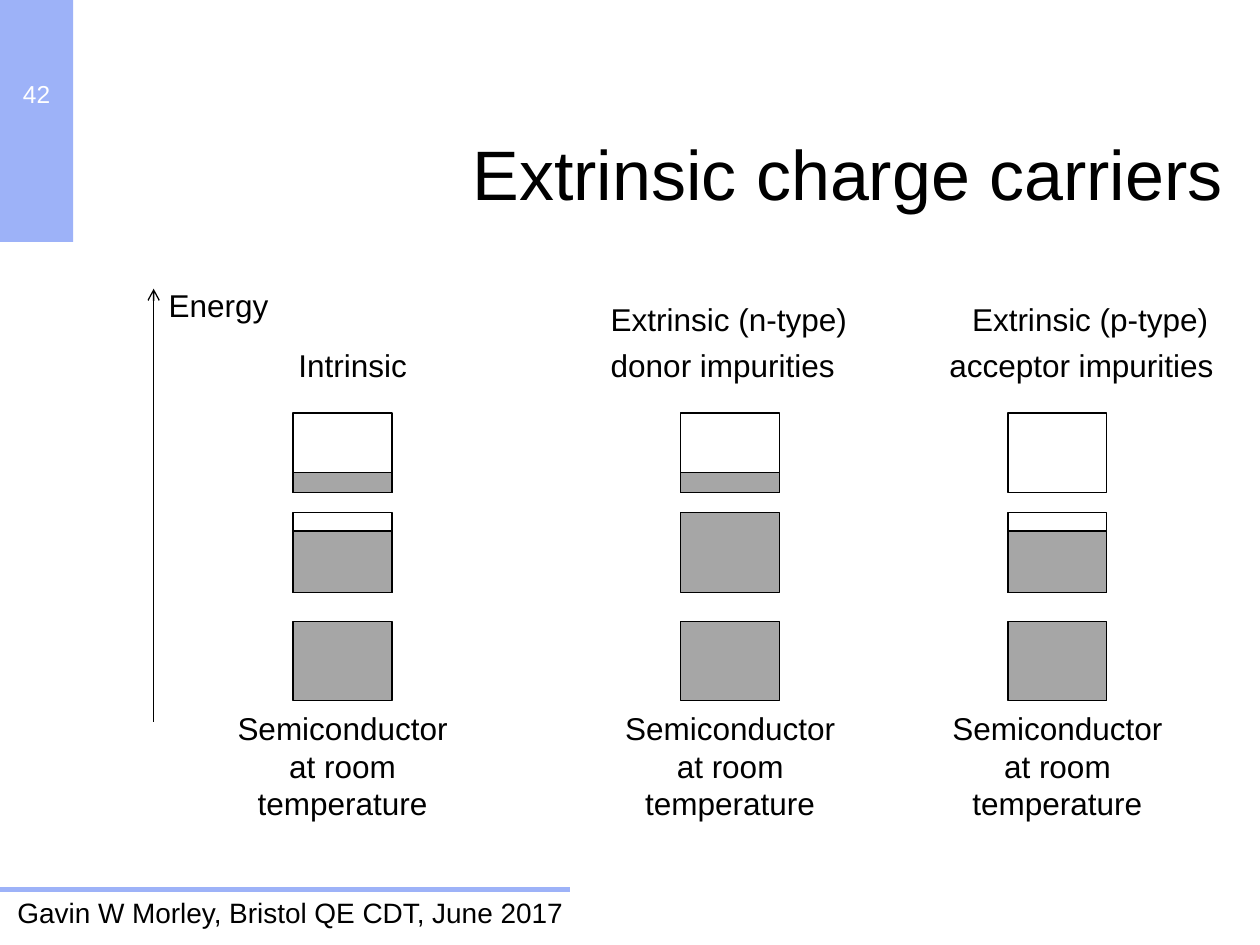
"""Build a slide comparing band filling in intrinsic and doped semiconductors."""
from dataclasses import dataclass
from typing import Optional

from lxml.etree import SubElement
from pptx import Presentation
from pptx.dml.color import RGBColor
from pptx.enum.shapes import MSO_CONNECTOR as CONN, MSO_SHAPE as SHAPE
from pptx.enum.text import PP_ALIGN as ALIGN
from pptx.oxml.ns import qn
from pptx.util import Pt

BLACK = RGBColor(0x00, 0x00, 0x00)
WHITE = RGBColor(0xFF, 0xFF, 0xFF)
BLUE = RGBColor(0x9D, 0xB2, 0xF8)
GREY = RGBColor(0xA6, 0xA6, 0xA6)

FONT = "Arial"
BAND_W, BAND_H = 56.5, 45.5
CAPTION_W, CAPTION_H = 141, 73
CAPTION_TOP = 401.5
CAPTION = "Semiconductor at room temperature"


@dataclass(frozen=True)
class Band:
    top: float
    filled: float


@dataclass(frozen=True)
class Material:
    left: float
    bands: tuple[Band, ...]


@dataclass(frozen=True)
class Label:
    text: str
    left: float
    top: float
    width: float
    height: float
    size: float = 18
    color: RGBColor = BLACK
    align: Optional[ALIGN] = None
    before: float = 5
    spacing: Optional[float] = None
    wrap: bool = True
    tabs: tuple[tuple[float, ...], ...] = ()


CONDUCTION, VALENCE, CORE = 236, 293, 355
HOLES, ELECTRONS = 35, 11.5

MATERIALS = (
    Material(167.5, (Band(CONDUCTION, ELECTRONS), Band(VALENCE, HOLES), Band(CORE, BAND_H))),
    Material(389, (Band(CONDUCTION, ELECTRONS), Band(VALENCE, BAND_H), Band(CORE, BAND_H))),
    Material(576, (Band(CONDUCTION, 0), Band(VALENCE, HOLES), Band(CORE, BAND_H))),
)

HEADINGS = (
    "\tExtrinsic (n-type)\tExtrinsic (p-type)\n"
    "Intrinsic\tdonor impurities\tacceptor impurities"
)

LABELS = (
    Label("Gavin W Morley, Bristol QE CDT, June 2017", 2.9, 508.3, 327.6, 26.6,
          size=16, before=0, wrap=False),
    Label("42", 0, 41.8, 41.8, 41.8, size=14, color=WHITE, align=ALIGN.CENTER, before=0),
    Label("Extrinsic charge carriers", 36, 71.3, 669.6, 55.4, size=40, align=ALIGN.RIGHT),
    Label("Energy", 89.3, 145.4, 72, 38.9, spacing=36, wrap=False),
    Label(HEADINGS, 163.4, 167.8, 553, 56.2, tabs=((178.5, 385), (178.5, 372))),
)


def add_rect(s, left: float, top: float, width: float, height: float,
             fill: Optional[RGBColor], line: Optional[RGBColor] = BLACK) -> None:
    sp = s.shapes.add_shape(SHAPE.RECTANGLE, Pt(left), Pt(top), Pt(width), Pt(height))
    sp.shadow.inherit = False
    if fill is None:
        sp.fill.background()
    else:
        sp.fill.solid()
        sp.fill.fore_color.rgb = fill
    if line is None:
        sp.line.fill.background()
    else:
        sp.line.color.rgb = line
        sp.line.width = Pt(0.75)


def add_line(s, x1: float, y1: float, x2: float, y2: float,
             color: RGBColor, width: float, arrow: bool = False) -> None:
    sp = s.shapes.add_connector(CONN.STRAIGHT, Pt(x1), Pt(y1), Pt(x2), Pt(y2))
    sp.line.color.rgb = color
    sp.line.width = Pt(width)
    if arrow:
        SubElement(sp.line._get_or_add_ln(), qn("a:tailEnd"), type="arrow")
    SubElement(sp._element.spPr, qn("a:effectLst"))


def add_label(s, label: Label) -> None:
    sp = s.shapes.add_textbox(Pt(label.left), Pt(label.top), Pt(label.width), Pt(label.height))
    tf = sp.text_frame
    tf.word_wrap = label.wrap
    for i, text in enumerate(label.text.split("\n")):
        p = tf.add_paragraph() if i else tf.paragraphs[0]
        p.alignment = label.align
        p.space_before = Pt(label.before)
        if label.spacing:
            p.line_spacing = Pt(label.spacing)
        if label.tabs:
            tab_list = SubElement(p._p.get_or_add_pPr(), qn("a:tabLst"))
            for pos in label.tabs[i]:
                SubElement(tab_list, qn("a:tab"), pos=str(Pt(pos)), algn="l")
        r = p.add_run()
        r.text = text
        r.font.name = FONT
        r.font.size = Pt(label.size)
        r.font.color.rgb = label.color


def add_material(s, material: Material) -> None:
    for band in material.bands:
        full = band.filled == BAND_H
        add_rect(s, material.left, band.top, BAND_W, BAND_H, GREY if full else None)
        if band.filled and not full:
            add_rect(s, material.left, band.top + BAND_H - band.filled,
                     BAND_W, band.filled, GREY)
    left = material.left + (BAND_W - CAPTION_W) / 2
    add_label(s, Label(CAPTION, left, CAPTION_TOP, CAPTION_W, CAPTION_H, align=ALIGN.CENTER))


def main() -> None:
    prs = Presentation()
    prs.slide_width, prs.slide_height = Pt(720), Pt(540)
    s = prs.slides.add_slide(prs.slide_layouts[6])
    add_rect(s, 0, 0, 41.8, 138.2, BLUE, None)
    add_line(s, 0, 508.3, 326, 508.3, BLUE, 3)
    add_line(s, 87.8, 412.5, 87.8, 165, BLACK, 0.75, arrow=True)
    for label in LABELS:
        add_label(s, label)
    for material in MATERIALS:
        add_material(s, material)
    prs.save("out.pptx")


if __name__ == "__main__":
    main()
